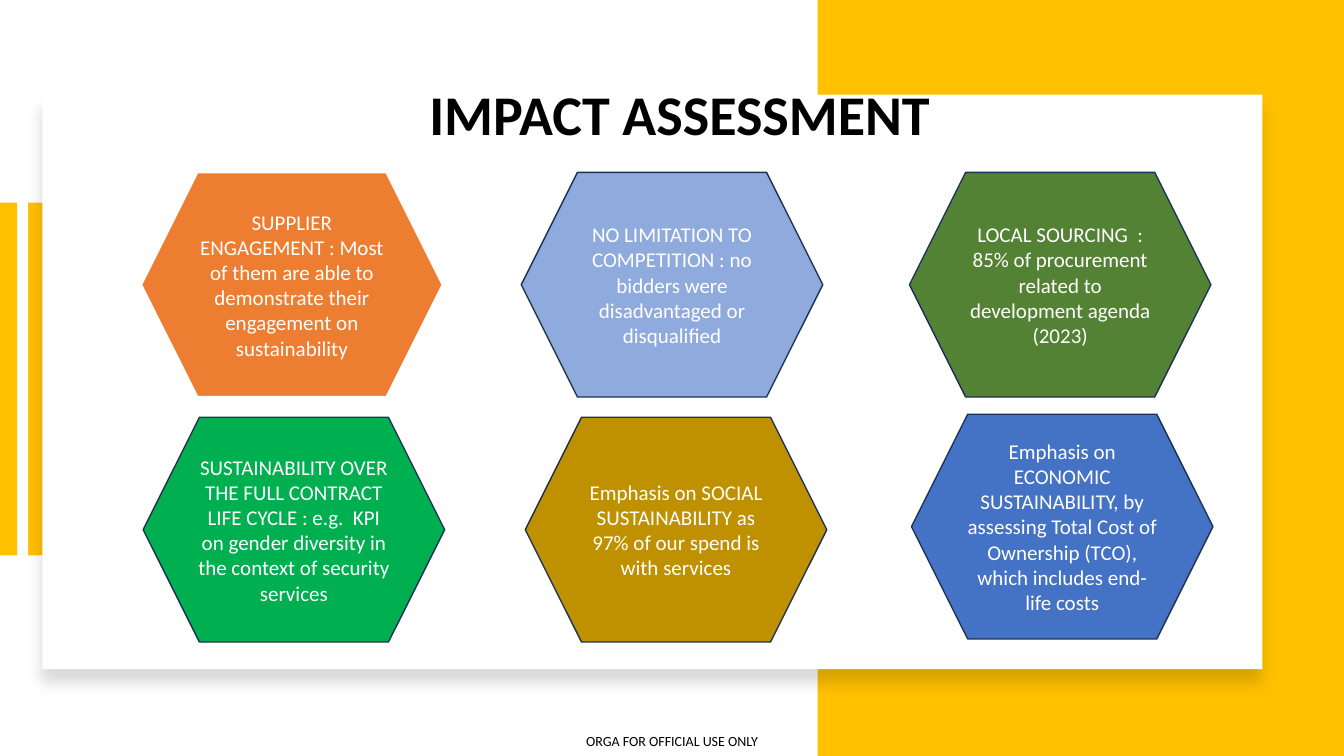
from lxml import etree
from pptx import Presentation
from pptx.dml.color import RGBColor as RGB
from pptx.enum.shapes import MSO_SHAPE as Shape
from pptx.enum.text import MSO_ANCHOR as Anchor, PP_ALIGN as Align
from pptx.oxml import parse_xml
from pptx.util import Inches, Pt

GOLD = RGB(0xFF, 0xC0, 0x00)
WHITE = RGB(0xFF, 0xFF, 0xFF)
BLACK = RGB(0x00, 0x00, 0x00)
NAVY = RGB(0x1E, 0x32, 0x56)
ORANGE = RGB(0xED, 0x7D, 0x31)
SKY = RGB(0x8F, 0xAA, 0xDC)
OLIVE = RGB(0x54, 0x82, 0x35)
GREEN = RGB(0x00, 0xB0, 0x50)
BRONZE = RGB(0xBF, 0x90, 0x00)
BLUE = RGB(0x44, 0x72, 0xC4)

FONT = "Calibri"
HEX_W, HEX_H = 2.99, 2.23
NS = "http://schemas.openxmlformats.org/drawingml/2006/main"
SHADOW = (
    f'<a:effectLst xmlns:a="{NS}">'
    f'<a:outerShdw blurRad="{Pt(11)}" dist="{Pt(10)}" dir="5400000" rotWithShape="0">'
    '<a:srgbClr val="000000"><a:alpha val="15000"/></a:srgbClr>'
    '</a:outerShdw></a:effectLst>'
)

POINTS = [
    (1.4, 1.71, ORANGE, "SUPPLIER ENGAGEMENT : Most of them are able to "
     "demonstrate their engagement on sustainability"),
    (5.17, 1.71, SKY, "NO LIMITATION TO COMPETITION : no bidders were "
     "disadvantaged or disqualified"),
    (9.02, 1.71, OLIVE, "LOCAL SOURCING  : 85% of procurement related to "
     "development agenda (2023)"),
    (1.42, 4.14, GREEN, "SUSTAINABILITY OVER THE FULL CONTRACT LIFE CYCLE : "
     "e.g.  KPI on gender diversity in the context of security services"),
    (5.21, 4.14, BRONZE, "Emphasis on SOCIAL SUSTAINABILITY as 97% of our "
     "spend is with services"),
    (9.04, 4.11, BLUE, "Emphasis on ECONOMIC SUSTAINABILITY, by assessing "
     "Total Cost of Ownership (TCO), which includes end-life costs"),
]


def add_form(slide, kind, box, fill):
    """Add a filled shape without outline or shadow."""
    form = slide.shapes.add_shape(kind, *map(Inches, box))
    form.shadow.inherit = False
    form.fill.solid()
    form.fill.fore_color.rgb = fill
    form.line.fill.background()
    return form


def write(form, text, size, color, bold=False):
    """Write one centred paragraph into a shape or text box."""
    frame = form.text_frame
    frame.word_wrap = True
    frame.vertical_anchor = Anchor.MIDDLE
    line = frame.paragraphs[0]
    line.text = text
    line.alignment = Align.CENTER
    line.font.name = FONT
    line.font.size = Pt(size)
    line.font.bold = bold
    line.font.color.rgb = color
    return frame


def add_label(slide, box, text, size, bold=False):
    """Add a black text box with no margins."""
    label = slide.shapes.add_textbox(*map(Inches, box))
    frame = write(label, text, size, BLACK, bold)
    frame.margin_left = frame.margin_right = 0
    frame.margin_top = frame.margin_bottom = 0


def add_frame(slide, box):
    """Draw the gold panel, the side bars and the white card in the box."""
    left, top, width, height = box
    panel = 5.22
    add_form(slide, Shape.RECTANGLE,
             (left + width - panel, top, panel, height), GOLD)
    for shift in (0, 0.28):
        add_form(slide, Shape.RECTANGLE,
                 (left + shift, top + 2.01, 0.17, 3.5), GOLD)
    card = add_form(slide, Shape.RECTANGLE,
                    (left + 0.42, top + 0.94, 12.1, 5.7), WHITE)
    props = card.fill._xPr
    props.remove(props.find(f"{{{NS}}}effectLst"))
    etree.ElementBase.append(props, parse_xml(SHADOW))


def add_hex(slide, box, fill, text):
    """Draw one assessment point as a hexagon in the box."""
    form = add_form(slide, Shape.HEXAGON, box, fill)
    plain = fill == ORANGE
    form.line.color.rgb = WHITE if plain else NAVY
    form.line.width = Pt(1.5 if plain else 1)
    write(form, text, 15, WHITE)


def main():
    """Build the impact assessment slide."""
    deck = Presentation()
    deck.slide_width, deck.slide_height = Inches(13.33), Inches(7.5)
    slide = deck.slides.add_slide(deck.slide_layouts[6])
    add_frame(slide, (0, 0, 13.33, 7.5))
    for left, top, fill, text in POINTS:
        add_hex(slide, (left, top, HEX_W, HEX_H), fill, text)
    add_label(slide, (0.99, 0.4, 11.5, 1.45), "IMPACT ASSESSMENT", 40, True)
    add_label(slide, (5.64, 7.21, 2.05, 0.29), "ORGA FOR OFFICIAL USE ONLY", 10)
    deck.save("out.pptx")


if __name__ == "__main__":
    main()
